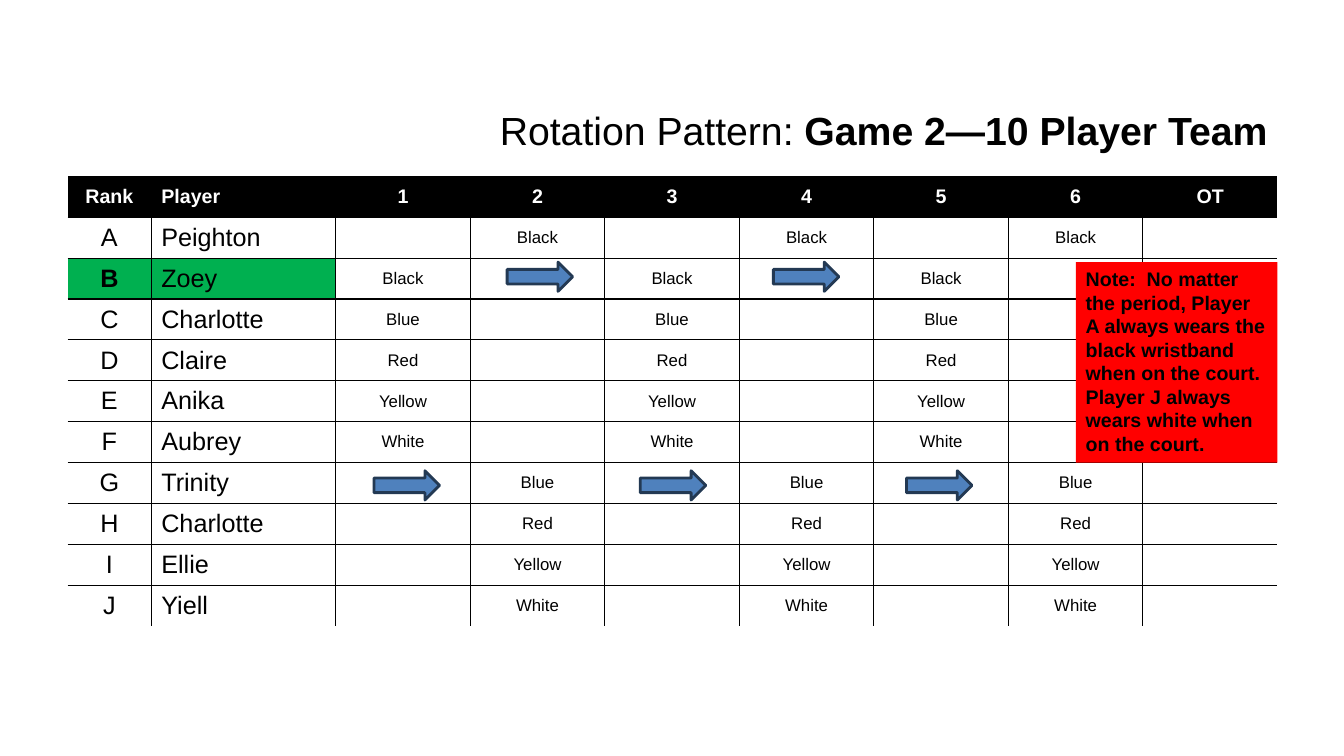
from lxml import etree
from pptx import Presentation
from pptx.dml.color import RGBColor
from pptx.enum.shapes import MSO_SHAPE
from pptx.enum.text import MSO_ANCHOR, MSO_AUTO_SIZE, PP_ALIGN
from pptx.oxml.ns import qn
from pptx.util import Inches, Pt

RECTANGLE, RIGHT_ARROW = MSO_SHAPE.RECTANGLE, MSO_SHAPE.RIGHT_ARROW
TOP, MIDDLE = MSO_ANCHOR.TOP, MSO_ANCHOR.MIDDLE
LEFT, CENTER, RIGHT = PP_ALIGN.LEFT, PP_ALIGN.CENTER, PP_ALIGN.RIGHT
FIXED_SIZE = MSO_AUTO_SIZE.NONE
TITLE_ONLY = 5

COLORS = {
    "black": "000000",
    "white": "FFFFFF",
    "green": "00B050",
    "red": "FF0000",
    "blue": "4F81BD",
    "navy": "233953",
}

HEADINGS = ["Rank", "Player", "1", "2", "3", "4", "5", "6", "OT"]
ODD, EVEN = (1, 3, 5), (2, 4, 6)
ROSTER = [
    ("A", "Peighton", "Black", EVEN),
    ("B", "Zoey", "Black", ODD),
    ("C", "Charlotte", "Blue", ODD),
    ("D", "Claire", "Red", ODD),
    ("E", "Anika", "Yellow", ODD),
    ("F", "Aubrey", "White", ODD),
    ("G", "Trinity", "Blue", EVEN),
    ("H", "Charlotte", "Red", EVEN),
    ("I", "Ellie", "Yellow", EVEN),
    ("J", "Yiell", "White", EVEN),
]
HIGHLIGHTED_RANK = "B"
RANK_WIDTH, PLAYER_WIDTH = 0.83, 1.83
TABLE_BOX = (0.67, 1.75, 12, 4.46)
NOTE = (
    "Note:  No matter the period, Player A always wears the black wristband "
    "when on the court.  Player J always wears white when on the court."
)


class RotationSlide:
    def __init__(self, slide, font_name="Arial"):
        self.slide = slide
        self.font_name = font_name

    def color(self, name):
        return RGBColor.from_string(COLORS[name])

    def add_text(self, paragraph, text, size, color="black", bold=False, align=LEFT):
        paragraph.alignment = align
        run = paragraph.add_run()
        run.text = text
        run.font.color.rgb = self.color(color)
        formats = {"name": self.font_name, "size": Pt(size), "bold": bold}
        for attribute, value in formats.items():
            setattr(run.font, attribute, value)

    def title(self, box, parts):
        """Fill the title placeholder with (text, bold) parts."""
        heading = self.slide.shapes.title
        for attribute, value in zip(("left", "top", "width", "height"), box):
            setattr(heading, attribute, Inches(value))
        frame = heading.text_frame
        formats = {"word_wrap": True, "auto_size": FIXED_SIZE, "vertical_anchor": TOP}
        for attribute, value in formats.items():
            setattr(frame, attribute, value)
        for text, bold in parts:
            self.add_text(frame.paragraphs[0], text, 28, bold=bold, align=RIGHT)

    def shape(self, kind, box, fill, line=None):
        shape = self.slide.shapes.add_shape(kind, *map(Inches, box))
        shape.shadow.inherit = False
        shape.fill.solid()
        shape.fill.fore_color.rgb = self.color(fill)
        if line:
            shape.line.color.rgb = self.color(line)
            shape.line.width = Pt(2)
        else:
            shape.line.fill.background()
        return shape

    def note(self, box, text):
        frame = self.shape(RECTANGLE, box, "red").text_frame
        frame.word_wrap = True
        frame.vertical_anchor = TOP
        self.add_text(frame.paragraphs[0], text, 14, bold=True)

    def table(self, box, rows, column_widths):
        grid = self.slide.shapes.add_table(
            len(rows), len(column_widths), *map(Inches, box)).table
        grid.first_row = grid.horz_banding = False
        for column, width in zip(grid.columns, column_widths):
            column.width = Inches(width)
        for row in grid.rows:
            row.height = Inches(box[3] / len(rows))
        for r, row in enumerate(rows):
            for c, text in enumerate(row):
                cell = grid.cell(r, c)
                self.inner_borders(cell, r, c, len(rows) - 1, len(row) - 1)
                self.fill_cell(cell, text, r, c, row[0])

    def fill_cell(self, cell, text, r, c, rank):
        header = r == 0
        marked = rank == HIGHLIGHTED_RANK and c < 2
        cell.fill.solid()
        cell.fill.fore_color.rgb = self.color(
            "black" if header else "green" if marked else "white")
        cell.vertical_anchor = MIDDLE
        if text:
            self.add_text(
                cell.text_frame.paragraphs[0], text,
                size=14 if header else 18 if c < 2 else 12,
                color="white" if header else "black",
                bold=header or (marked and c == 0),
                align=LEFT if c == 1 else CENTER)

    def inner_borders(self, cell, r, c, last_row, last_column):
        """Rule every side of the cell that is not on the table's edge."""
        properties = cell._tc.get_or_add_tcPr()
        sides = {"a:lnL": c > 0, "a:lnR": c < last_column,
                 "a:lnT": r > 0, "a:lnB": r < last_row}
        for tag, inside in sides.items():
            line = etree.SubElement(properties, qn(tag), w=str(Pt(1)))
            if inside:
                fill = etree.SubElement(line, qn("a:solidFill"))
                etree.SubElement(fill, qn("a:srgbClr"), val=COLORS["black"])
            else:
                etree.SubElement(line, qn("a:noFill"))


def rotation_rows():
    rows = [HEADINGS]
    for rank, player, wristband, periods in ROSTER:
        turns = [wristband if period in periods else "" for period in range(1, 8)]
        rows.append([rank, player, *turns])
    return rows


def main():
    presentation = Presentation()
    presentation.slide_width = Inches(13.33)
    presentation.slide_height = Inches(7.5)
    layout = presentation.slide_layouts[TITLE_ONLY]
    page = RotationSlide(presentation.slides.add_slide(layout))

    page.title((3.92, 1, 8.75, 0.57),
               [("Rotation Pattern:", False), (" Game 2—10 Player Team", True)])
    period_count = len(HEADINGS) - 2
    period_width = (TABLE_BOX[2] - RANK_WIDTH - PLAYER_WIDTH) / period_count
    page.table(TABLE_BOX, rotation_rows(),
               [RANK_WIDTH, PLAYER_WIDTH] + [period_width] * period_count)
    page.note((10.67, 2.6, 2, 1.99), NOTE)
    for turn in range(5):
        arrow_top = 2.6 if turn % 2 else 4.67
        page.shape(RIGHT_ARROW, (3.71 + 1.32 * turn, arrow_top, 0.65, 0.29),
                   "blue", "navy")

    presentation.save("out.pptx")


if __name__ == "__main__":
    main()
